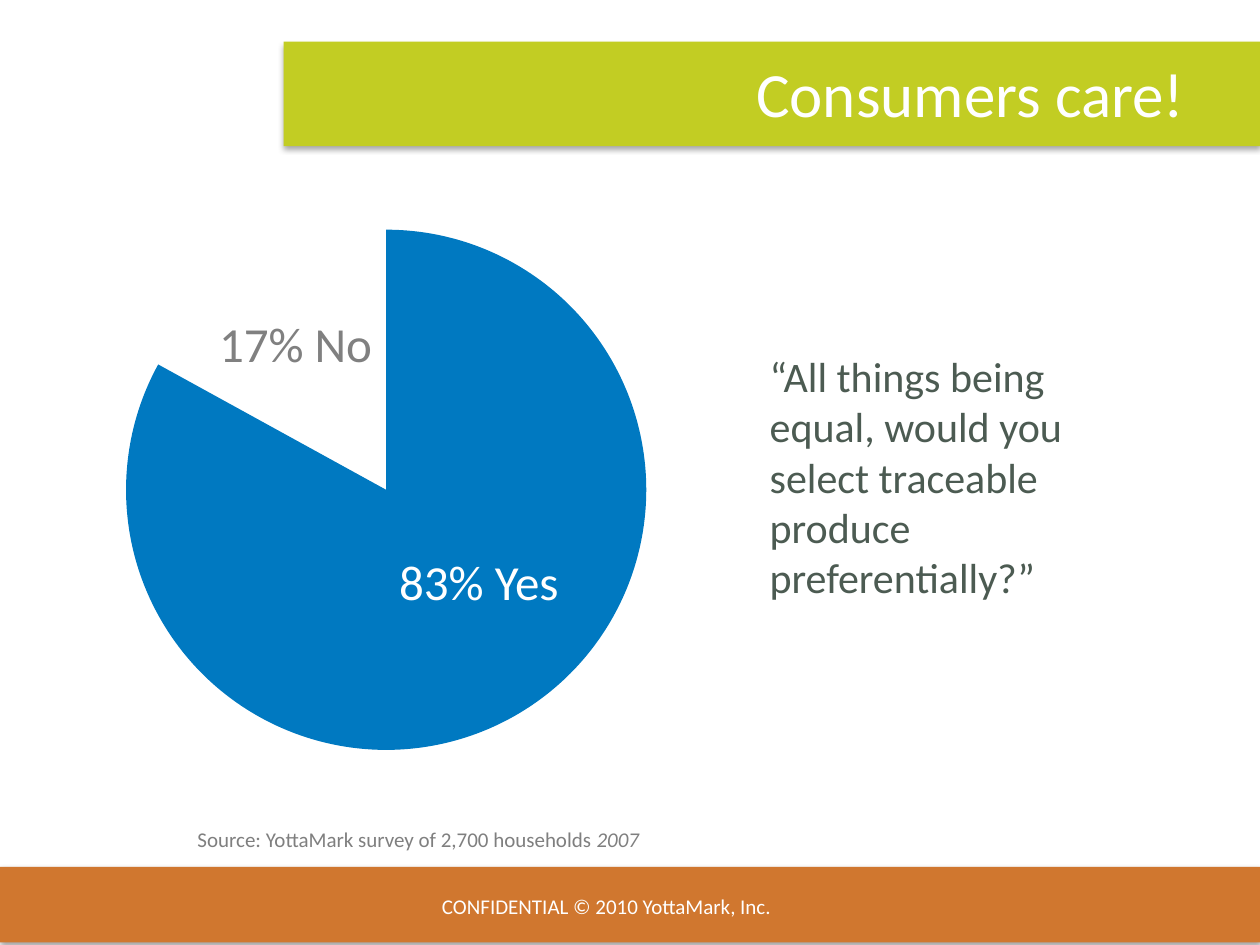
from dataclasses import dataclass

import lxml.etree
import pptx
import pptx.chart.data
import pptx.dml.color
import pptx.enum.chart
import pptx.enum.shapes
import pptx.enum.text
import pptx.oxml
import pptx.oxml.ns
import pptx.util

Pt = pptx.util.Pt
ALIGN = pptx.enum.text.PP_ALIGN
ANCHOR = pptx.enum.text.MSO_ANCHOR
FONT = "Calibri"
WHITE = "FFFFFF"
GREY = "7F7F7F"


@dataclass
class Band:
    left: float
    top: float
    width: float
    height: float
    color: str


@dataclass
class Label:
    text: str
    left: float
    top: float
    width: float
    height: float
    size: float
    color: str
    wrap: bool = True
    grow: bool = False
    align: ALIGN = ALIGN.LEFT
    anchor: ANCHOR = ANCHOR.TOP
    italic_tail: str = ""


FOOTER_BAND = Band(0, 495.36, 720, 43.2, "D0772F")
TITLE_BAND = Band(162, 23.76, 558, 59.76, "C2CD23")

FOOTER = Label("CONFIDENTIAL © 2010 YottaMark, Inc.", 245.5, 506.9, 228.2, 28.8, 12, WHITE)
SURVEY_SOURCE = Label("Source: YottaMark survey of 2,700 households ", 105.8, 468.7, 297.4, 21.6,
                      12, GREY, wrap=False, grow=True, italic_tail="2007")
ANSWERS = [
    Label("83% Yes", 221, 311.8, 106.6, 41, 28, WHITE, wrap=False, grow=True),
    Label("17% No", 118.1, 175.7, 103, 41, 28, "808080", wrap=False, grow=True),
]
QUESTION = Label("“All things being equal, would you select traceable produce preferentially?”",
                 432.7, 196.6, 226.8, 152.6, 24, "4C5B52", grow=True)
TITLE = Label("Consumers care!", 36, 21.6, 648, 62.6, 36, WHITE,
              align=ALIGN.RIGHT, anchor=ANCHOR.MIDDLE)


def rgb(color: str) -> pptx.dml.color.RGBColor:
    return pptx.dml.color.RGBColor.from_string(color)


def draw_band(slide, band: Band) -> None:
    shape = slide.shapes.add_shape(
        pptx.enum.shapes.MSO_SHAPE.RECTANGLE,
        Pt(band.left), Pt(band.top), Pt(band.width), Pt(band.height))
    shape.fill.solid()
    shape.fill.fore_color.rgb = rgb(band.color)
    shape.line.fill.background()
    # Soft shadow straight below the band
    shape.shadow.inherit = False
    effects = shape._element.spPr.find(pptx.oxml.ns.qn("a:effectLst"))
    effects.append(pptx.oxml.parse_xml(
        f'<a:outerShdw {pptx.oxml.ns.nsdecls("a")} blurRad="{Pt(3.1)}" dist="{Pt(1.8)}" '
        'dir="5400000" rotWithShape="0"><a:srgbClr val="000000"><a:alpha val="35000"/>'
        '</a:srgbClr></a:outerShdw>'))


def draw_label(slide, label: Label) -> None:
    box = slide.shapes.add_textbox(
        Pt(label.left), Pt(label.top), Pt(label.width), Pt(label.height))
    frame = box.text_frame
    frame.word_wrap = label.wrap
    frame.vertical_anchor = label.anchor
    if label.grow:
        frame.auto_size = pptx.enum.text.MSO_AUTO_SIZE.SHAPE_TO_FIT_TEXT
    paragraph = frame.paragraphs[0]
    paragraph.alignment = label.align
    paragraph.font.name = FONT
    paragraph.font.size = Pt(label.size)
    paragraph.font.color.rgb = rgb(label.color)
    paragraph.add_run().text = label.text
    if label.italic_tail:
        tail = paragraph.add_run()
        tail.text = label.italic_tail
        tail.font.italic = True


def draw_survey_pie(slide) -> None:
    survey = pptx.chart.data.CategoryChartData()
    survey.categories = ["1", "2"]
    survey.add_series("Series 1", (83, 17))
    pie = slide.shapes.add_chart(
        pptx.enum.chart.XL_CHART_TYPE.PIE,
        Pt(-19.4), Pt(121.7), Pt(480.2), Pt(319.7), survey).chart
    pie.has_legend = False
    pie.has_title = False
    pie.font.name = FONT
    pie.font.size = Pt(18)
    pie.font.color.rgb = rgb("000000")
    pie.plots[0].vary_by_categories = False

    # Only the "yes" slice is filled
    points = pie.plots[0].series[0].points
    yes, no = points[0].format, points[1].format
    yes.fill.solid()
    yes.fill.fore_color.rgb = rgb("0079C1")
    no.fill.background()
    for slice_format in (yes, no):
        slice_format.line.fill.background()

    # Fixed inner plot area
    plot_area = pie._chartSpace.chart.plotArea
    for layout in plot_area.findall(pptx.oxml.ns.qn("c:layout")):
        plot_area.remove(layout)
    layout = lxml.etree.Element(pptx.oxml.ns.qn("c:layout"))
    manual = lxml.etree.SubElement(layout, pptx.oxml.ns.qn("c:manualLayout"))
    settings = {"layoutTarget": "inner", "xMode": "edge", "yMode": "edge",
                "x": "0.02", "y": "0.03", "w": "0.96", "h": "0.93"}
    for tag, value in settings.items():
        lxml.etree.SubElement(manual, pptx.oxml.ns.qn(f"c:{tag}")).set("val", value)
    plot_area.insert(0, layout)


def main() -> None:
    deck = pptx.Presentation()
    deck.slide_width, deck.slide_height = Pt(720), Pt(540)
    slide = deck.slides.add_slide(deck.slide_layouts[6])

    # Footer and title band
    draw_band(slide, FOOTER_BAND)
    draw_label(slide, FOOTER)
    draw_band(slide, TITLE_BAND)

    # Survey result
    draw_label(slide, SURVEY_SOURCE)
    draw_survey_pie(slide)
    for answer in ANSWERS:
        draw_label(slide, answer)

    # Question and title
    draw_label(slide, QUESTION)
    draw_label(slide, TITLE)
    deck.save("out.pptx")


if __name__ == "__main__":
    main()
